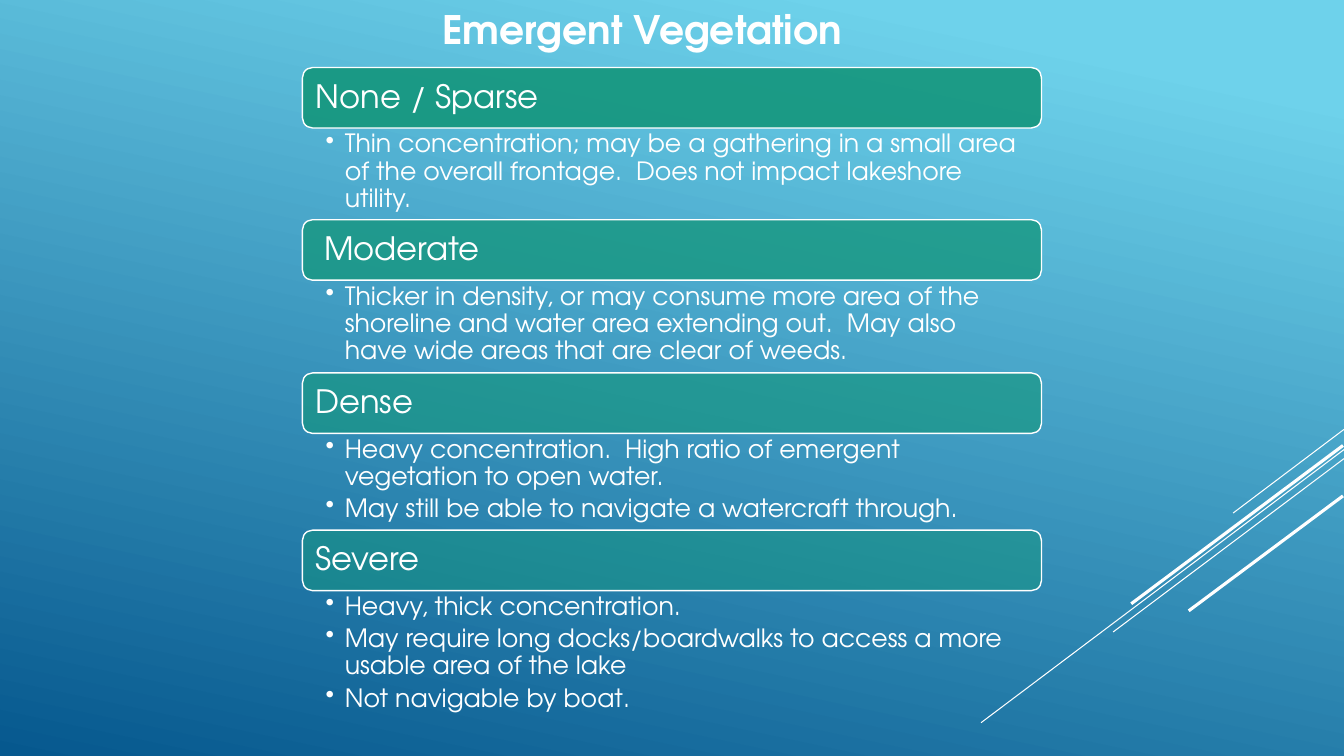
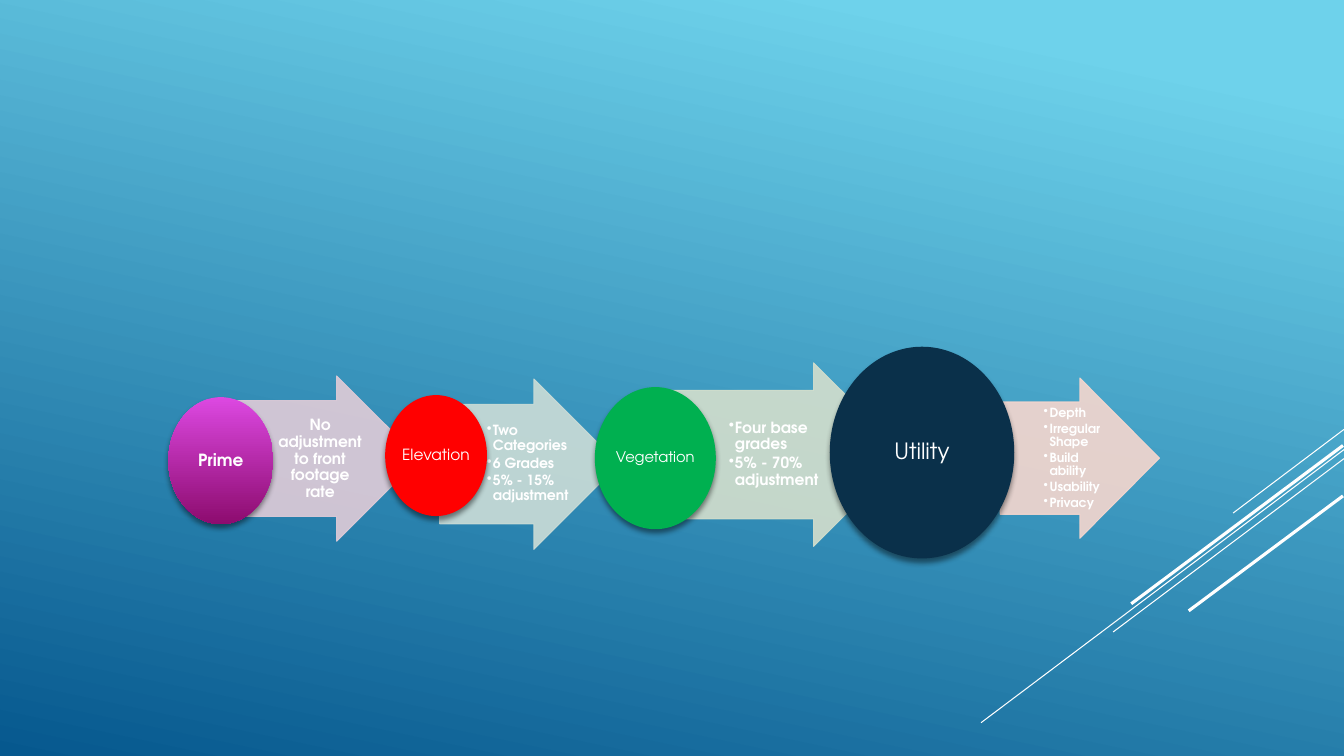
"""Build two lakeshore grading slides: vegetation levels and the adjustment chain."""
from dataclasses import dataclass
from typing import Any

import lxml.etree
import pptx
import pptx.dml.color
import pptx.enum.shapes
import pptx.enum.text
import pptx.oxml.ns
import pptx.util

FONT = "TeX Gyre Adventor"
COLORS = {
    "sky": "6ED2EB", "deep": "06588E", "white": "FFFFFF", "teal": "14967C",
    "pink": "DC48E1", "plum": "8D0C6F", "red": "FF0000", "green": "00B050", "navy": "0A304A",
    "mauve": "E1CCD8", "mist": "CCDDD7", "sage": "D4DFCD", "peach": "F6D7CE", "black": "000000",
}
SHAPE = pptx.enum.shapes.MSO_SHAPE
ALIGN = pptx.enum.text.PP_ALIGN
ANCHOR = pptx.enum.text.MSO_ANCHOR
qn = pptx.oxml.ns.qn
Box = tuple[int, int, int, int]


@dataclass(frozen=True)
class Stripe:
    """A decorative diagonal line."""
    x1: int
    y1: int
    x2: int
    y2: int
    weight: float


@dataclass(frozen=True)
class Level:
    """A vegetation level with its heading bar and list."""
    name: str
    opacity: int
    height: int
    items: tuple[str, ...]


@dataclass(frozen=True)
class Step:
    """An ellipse with the arrow that leaves it."""
    name: str
    oval: Box
    oval_fill: tuple[str, ...]
    oval_font: dict[str, Any]
    arrow: Box
    arrow_fill: str
    items: tuple[str, ...]
    size: float
    bulleted: bool = True


STRIPES = (
    Stripe(1333, 426, 1223, 509, 0.75),
    Stripe(1333, 446, 973, 717, 0.75),
    Stripe(1333, 455, 1104, 627, 0.75),
    Stripe(1332, 442, 1122, 599, 2.25),
    Stripe(1332, 492, 1179, 606, 2.25),
)
LEVELS = (
    Level("None / Sparse", 90, 91, (
        "Thin concentration; may be a gathering in a small area of the overall frontage.  "
        "Does not impact lakeshore utility.",)),
    Level(" Moderate", 77, 92, (
        "Thicker in density, or may consume more area of the shoreline and water area "
        "extending out.  May also have wide areas that are clear of weeds.",)),
    Level("Dense", 63, 96, (
        "Heavy concentration.  High ratio of emergent vegetation to open water.",
        "May still be able to navigate a watercraft through.")),
    Level("Severe", 50, 130, (
        "Heavy, thick concentration.",
        "May require long docks/boardwalks to access a more usable area of the lake",
        "Not navigable by boat.")),
)
STEPS = (
    Step("Prime", (167, 394, 104, 126), ("pink", "plum"), {"size": 12, "bold": True},
         (220, 373, 196, 164), "mauve", ("No adjustment to front footage rate",), 11, False),
    Step("Elevation", (382, 392, 101, 120), ("red",), {"size": 11},
         (436, 376, 178, 169), "mist", ("Two Categories", "6 Grades", "5% - 15% adjustment"), 10),
    Step("Vegetation", (590, 384, 120, 141), ("green",), {"size": 10.5},
         (660, 360, 238, 182), "sage", ("Four base grades", "5% - 70% adjustment"), 11),
    Step("Utility", (823, 344, 183, 210), ("navy",), {"size": 16},
         (992, 375, 158, 159), "peach",
         ("Depth", "Irregular Shape", "Build ability", "Usability", "Privacy"), 9),
)


def px(n: int) -> int:
    """Turn px, at 100 to the inch, into EMU."""
    return pptx.util.Emu(n * 9144)


def rgb(name: str) -> pptx.dml.color.RGBColor:
    """Look up a named colour."""
    return pptx.dml.color.RGBColor.from_string(COLORS[name])


def apply(target: Any, values: dict[str, Any]) -> None:
    """Set each attribute in values on target."""
    for name, value in values.items():
        setattr(target, name, value)


def place(box: Box) -> list[int]:
    """Turn a px box into EMU."""
    return [px(n) for n in box]


def sub(parent: Any, tag: str, **attrs: Any) -> Any:
    """Append a drawing element."""
    return lxml.etree.SubElement(parent, qn(tag), {k: str(v) for k, v in attrs.items()})


def gradient(fill: Any, first: tuple[int, str], last: tuple[int, str], angle: int) -> None:
    """Fill with two stops along a clockwise angle."""
    fill.gradient()
    fill.gradient_angle = 360 - angle
    for stop, (percent, name) in zip(fill.gradient_stops, (first, last)):
        stop.position = percent / 100
        stop.color.rgb = rgb(name)


def fade(sh: Any, percent: int, with_line: bool) -> None:
    """Set the opacity of the fill, and of the line if asked."""
    clrs = list(sh.element.spPr.iter(qn("a:srgbClr")))
    for clr in clrs if with_line else clrs[:1]:
        sub(clr, "a:alpha", val=percent * 1000)


def add_shape(s: Any, kind: Any, box: Box, fill: str, line: str = "", weight: float = 0) -> Any:
    """Draw a flat preset shape."""
    sh = s.shapes.add_shape(kind, *place(box))
    sh.shadow.inherit = False
    sh.fill.solid()
    sh.fill.fore_color.rgb = rgb(fill)
    if line:
        sh.line.color.rgb = rgb(line)
        sh.line.width = pptx.util.Pt(weight)
    else:
        sh.line.fill.background()
    return sh


def write(sh: Any, lines: tuple[str, ...], font: dict[str, Any], insets: Box,
          anchor: Any = ANCHOR.MIDDLE, align: Any = ALIGN.LEFT, indent: int = 0,
          after: float = 0, spacing: float = 0.9, wrap: bool = True) -> None:
    """Write paragraphs, bulleted when an indent is given."""
    tf = sh.text_frame
    sides = ("margin_left", "margin_top", "margin_right", "margin_bottom")
    apply(tf, {"word_wrap": wrap, "vertical_anchor": anchor, **dict(zip(sides, place(insets)))})
    for i, line in enumerate(lines):
        p = tf.add_paragraph() if i else tf.paragraphs[0]
        apply(p, {"alignment": align, "line_spacing": spacing,
                  "space_after": pptx.util.Pt(after)})
        if indent:
            pPr = p._p.get_or_add_pPr()
            pPr.set("marL", str(px(indent)))
            pPr.set("indent", str(-px(indent)))
            sub(pPr, "a:buChar", char="•")
        r = p.add_run()
        r.text = line
        apply(r.font, {"name": FONT, **font, "size": pptx.util.Pt(font["size"])})
        r.font.color.rgb = rgb("white")


def add_stripe(s: Any, stripe: Stripe) -> Any:
    """Draw one decorative line."""
    ends = place((stripe.x1, stripe.y1, stripe.x2, stripe.y2))
    ln = s.shapes.add_connector(pptx.enum.shapes.MSO_CONNECTOR.STRAIGHT, *ends)
    ln.line.color.rgb = rgb("white")
    ln.line.width = pptx.util.Pt(stripe.weight)
    sub(ln.element.spPr, "a:effectLst")
    return ln


def style_master(prs: Any, s: Any) -> None:
    """Give the master its background and stripes."""
    master = prs.slide_master
    gradient(master.background.fill, (10, "sky"), (100, "deep"), 102)
    for stripe in STRIPES:
        master.shapes.element.append(add_stripe(s, stripe).element)


def add_level(s: Any, level: Level, top: int) -> int:
    """Draw one level and return the top of the next."""
    left, width, bar = 300, 733, 60
    sh = add_shape(s, SHAPE.ROUNDED_RECTANGLE, (left, top, width, bar), "teal", "white", 1)
    fade(sh, level.opacity, False)
    write(sh, (level.name,), {"size": 23}, (10, 10, 10, 10))
    body = s.shapes.add_textbox(*place((left, top + bar, width, level.height)))
    write(body, level.items, {"size": 18}, (23, 3, 18, 3), ANCHOR.TOP, indent=19, after=3.6)
    return top + bar + level.height


def add_step(s: Any, step: Step) -> None:
    """Draw one arrow, its text and its ellipse."""
    x, y, w, h = step.arrow
    arrow = add_shape(s, SHAPE.RIGHT_ARROW, step.arrow, step.arrow_fill, step.arrow_fill, 0.75)
    arrow.adjustments[0] = 0.7
    fade(arrow, 90, True)
    box = (x + round(w / 4), y + round(0.15 * h), round(0.487 * w), round(0.7 * h))
    write(s.shapes.add_textbox(*place(box)), step.items, {"size": step.size, "bold": True},
          (3, 1, 1, 1), align=ALIGN.LEFT if step.bulleted else ALIGN.CENTER,
          indent=6 if step.bulleted else 0, after=0.15 * step.size)
    oval = add_shape(s, SHAPE.OVAL, step.oval, step.oval_fill[0])
    if len(step.oval_fill) > 1:
        gradient(oval.fill, (0, step.oval_fill[0]), (100, step.oval_fill[1]), 90)
    shadow = sub(oval.element.spPr.find(qn("a:effectLst")), "a:outerShdw", blurRad=50800,
                 dist=38100, dir=5400000, rotWithShape=0)
    sub(sub(shadow, "a:srgbClr", val=COLORS["black"]), "a:alpha", val=46000)
    write(oval, (step.name,), step.oval_font, (1, 1, 1, 1), align=ALIGN.CENTER)


def build_levels(s: Any) -> None:
    """Fill the vegetation slide."""
    title = s.shapes.title
    apply(title, dict(zip(("left", "top", "width", "height"), place((425, 0, 424, 57)))))
    write(title, ("Emergent Vegetation",), {"size": 28, "bold": True}, (10, 5, 10, 5),
          ANCHOR.TOP, ALIGN.CENTER, spacing=1.0, wrap=False)
    top = 67
    for level in LEVELS:
        top = add_level(s, level, top)


def build_steps(s: Any) -> None:
    """Fill the adjustment slide."""
    for step in STEPS:
        add_step(s, step)


def main() -> None:
    """Build and save the presentation."""
    prs = pptx.Presentation()
    apply(prs, {"slide_width": px(1333), "slide_height": px(750)})
    title_only, blank = prs.slide_layouts[5], prs.slide_layouts[6]
    s = prs.slides.add_slide(title_only)
    style_master(prs, s)
    build_levels(s)
    build_steps(prs.slides.add_slide(blank))
    prs.save("out.pptx")


if __name__ == "__main__":
    main()
